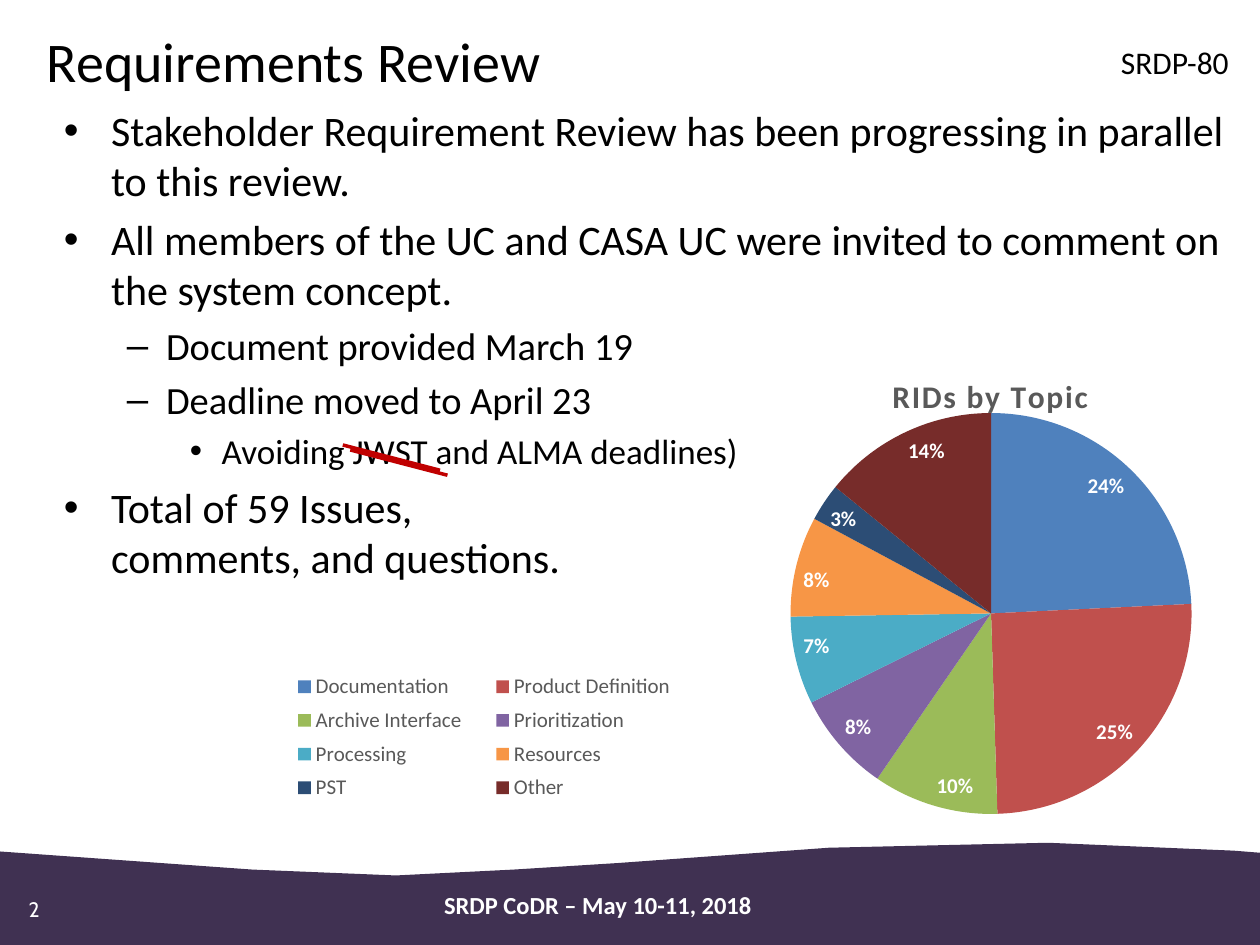
import pptx
import pptx.chart.data
import pptx.dml.color
import pptx.enum.chart
import pptx.enum.shapes
import pptx.enum.text
import pptx.oxml
import pptx.oxml.ns
import pptx.util

Cm = pptx.util.Cm
Pt = pptx.util.Pt
Align = pptx.enum.text.PP_ALIGN

COLOURS = {"ink": "000000", "paper": "FFFFFF", "wave": "403152", "strike": "C00000", "muted": "595959"}

TOPICS = {
    "Documentation": (24, "4F81BD"),
    "Product Definition": (25, "C0504D"),
    "Archive Interface": (10, "9BBB59"),
    "Prioritization": (8, "8064A2"),
    "Processing": (7, "4BACC6"),
    "Resources": (8, "F79646"),
    "PST": (3, "2C4D75"),
    "Other": (14, "772C2A"),
}

LEVELS = [("•", 0.95, 0.95, 24), ("–", 2.06, 0.79, 22), ("•", 3.18, 0.64, 20)]

REVIEW_POINTS = [
    (0, "Stakeholder Requirement Review has been progressing in parallel to this review."),
    (0, "All members of the UC and CASA UC were invited to comment on the system concept."),
    (1, "Document provided March 19"),
    (1, "Deadline moved to April 23"),
    (2, "Avoiding JWST and ALMA deadlines)"),
]

WAVE = [(-0.23, 17.15), (5.08, 17.53), (7.98, 17.65), (10.36, 17.53), (12.45, 17.4), (16.71, 17.09),
        (21.13, 16.99), (24.87, 17.15), (25.76, 17.22), (25.73, 19.3), (-0.18, 19.25)]


def colour(hex_value):
    """Turn a hex string into a colour."""
    return pptx.dml.color.RGBColor.from_string(hex_value)


class SlideBuilder:
    """Hold the style and the current slide."""

    def __init__(self, slide, font="Calibri"):
        """Keep the slide and its main font."""
        self.slide = slide
        self.font = font

    def style(self, font, size, hue="ink", bold=False, name=None):
        """Set the face, size, weight and colour of a font."""
        font.name = name or self.font
        font.size = Pt(size)
        font.bold = bold
        font.color.rgb = colour(COLOURS[hue])

    def title(self, words, left, top, width, height):
        """Fill and place the title placeholder."""
        title = self.slide.shapes.title
        title.left, title.top, title.width, title.height = Cm(left), Cm(top), Cm(width), Cm(height)
        frame = title.text_frame
        frame.auto_size = pptx.enum.text.MSO_AUTO_SIZE.NONE
        frame.vertical_anchor = pptx.enum.text.MSO_ANCHOR.TOP
        frame.paragraphs[0].alignment = Align.LEFT
        run = frame.paragraphs[0].add_run()
        run.text = words
        self.style(run.font, 32)

    def frame(self, left, top, width, height):
        """Add a wrapping text box and return its frame."""
        frame = self.slide.shapes.add_textbox(Cm(left), Cm(top), Cm(width), Cm(height)).text_frame
        frame.word_wrap = True
        return frame

    def label(self, words, box, size, align=Align.LEFT, inset=True, **look):
        """Add one line of text."""
        frame = self.frame(*box)
        if not inset:
            frame.margin_left = frame.margin_top = frame.margin_right = frame.margin_bottom = 0
        frame.paragraphs[0].alignment = align
        run = frame.paragraphs[0].add_run()
        run.text = words
        self.style(run.font, size, **look)

    def bullets(self, points, box):
        """Add a bulleted list of (level, words) pairs."""
        frame = self.frame(*box)
        for index, (level, words) in enumerate(points):
            mark, indent, hang, size = LEVELS[level]
            point = frame.add_paragraph() if index else frame.paragraphs[0]
            point.level = level
            properties = point._p.get_or_add_pPr()
            properties.set("marL", str(Cm(indent)))
            properties.set("indent", str(-Cm(hang)))
            for tag, key, value in (("buFont", "typeface", "Arial"), ("buChar", "char", mark)):
                bullet = pptx.oxml.parse_xml(f'<a:{tag} {pptx.oxml.ns.nsdecls("a")} {key}="{value}"/>')
                properties.append(bullet)
            if index:
                point.space_before = Pt(size * 0.2)
            run = point.add_run()
            run.text = words
            self.style(run.font, size)

    def wave(self, points):
        """Draw the footer band."""
        outline = self.slide.shapes.build_freeform(Cm(points[0][0]), Cm(points[0][1]))
        outline.add_line_segments([(Cm(x), Cm(y)) for x, y in points[1:]], close=True)
        band = outline.convert_to_shape()
        band.shadow.inherit = False
        band.fill.solid()
        band.fill.fore_color.rgb = colour(COLOURS["wave"])
        band.line.fill.background()

    def strike_out(self, left, top, width, height):
        """Cross out a word with two offset lines."""
        group = self.slide.shapes.add_group_shape()
        for dx, dy in ((0, 0), (0.15, 0.1)):
            x, y = left + dx, top + dy
            stroke = group.shapes.add_connector(
                pptx.enum.shapes.MSO_CONNECTOR.STRAIGHT, Cm(x), Cm(y), Cm(x + width), Cm(y + height))
            stroke.line.color.rgb = colour(COLOURS["strike"])
            stroke.line.width = Pt(2)
            effects = pptx.oxml.parse_xml(f'<a:effectLst {pptx.oxml.ns.nsdecls("a")}/>')
            stroke._element.spPr.append(effects)

    def arrange(self, part, index, inner=False, **edges):
        """Give a chart part a manual layout."""
        for old in part.findall(pptx.oxml.ns.qn("c:layout")):
            part.remove(old)
        target = '<c:layoutTarget val="inner"/>' if inner else ""
        modes = "".join(f'<c:{edge}Mode val="edge"/>' for edge in "xy")
        sizes = "".join(f'<c:{edge} val="{value}"/>' for edge, value in edges.items())
        part.insert(index, pptx.oxml.parse_xml(
            f'<c:layout {pptx.oxml.ns.nsdecls("c")}><c:manualLayout>{target}{modes}{sizes}'
            '</c:manualLayout></c:layout>'))

    def pie(self, heading, topics, left, top, width, height):
        """Add the pie chart with its title, legend and labels."""
        shares = pptx.chart.data.CategoryChartData()
        shares.categories = list(topics)
        shares.add_series("Series 1", [value for value, _ in topics.values()])
        chart = self.slide.shapes.add_chart(
            pptx.enum.chart.XL_CHART_TYPE.PIE, Cm(left), Cm(top), Cm(width), Cm(height), shares).chart
        self.style(chart.font, 10)

        run = chart.chart_title.text_frame.paragraphs[0].add_run()
        run.text = heading
        self.style(run.font, 18, "muted", bold=True)
        run.font._element.set("spc", "100")
        self.arrange(chart.chart_title._element, 1, x=0.66, y=0.05)

        chart.has_legend = True
        chart.legend.position = pptx.enum.chart.XL_LEGEND_POSITION.TOP
        chart.legend.include_in_layout = False
        self.style(chart.legend.font, 12, "muted")
        self.arrange(chart.legend._element, 1, x=0.04, y=0.65, w=0.43, h=0.29)

        plot = chart.plots[0]
        self.arrange(plot._element.getparent(), 0, inner=True, x=0.54, y=0.14, w=0.45, h=0.81)
        plot.vary_by_categories = True
        for index, (_, hue) in enumerate(topics.values()):
            wedge = plot.series[0].points[index].format
            wedge.fill.solid()
            wedge.fill.fore_color.rgb = colour(hue)
            wedge.line.fill.background()
        plot.has_data_labels = True
        labels = plot.data_labels
        labels.show_percentage = True
        labels.show_value = False
        labels.number_format = "0%"
        labels.number_format_is_linked = False
        labels.position = pptx.enum.chart.XL_LABEL_POSITION.INSIDE_END
        self.style(labels.font, 12, "paper", bold=True)


def main():
    """Build the requirements review slide."""
    deck = pptx.Presentation()
    deck.slide_width, deck.slide_height = Cm(25.4), Cm(19.05)
    review = SlideBuilder(deck.slides.add_slide(deck.slide_layouts[5]))
    review.wave(WAVE)
    review.label("2", (0.58, 18.08, 10.46, 0.61), 12, inset=False, hue="paper", name="Cabin")
    review.label("SRDP CoDR – May 10-11, 2018", (4.83, 17.81, 14.45, 1.07), 14, Align.CENTER,
                 hue="paper", bold=True)
    review.title("Requirements Review", 0.69, 0.41, 23.98, 1.32)
    review.bullets(REVIEW_POINTS, (1.04, 1.98, 23.98, 6.6))
    review.strike_out(6.91, 8.97, 1.96, 0.51)
    review.bullets([(0, "Total of 59 Issues, comments, and questions.")], (1.04, 9.58, 10.77, 4.67))
    review.pie("RIDs by Topic", TOPICS, 4.65, 6.93, 20.04, 9.98)
    review.label("SRDP-80", (19.43, 0.74, 5.59, 1.02), 18, Align.RIGHT)
    deck.save("out.pptx")


if __name__ == "__main__":
    main()
